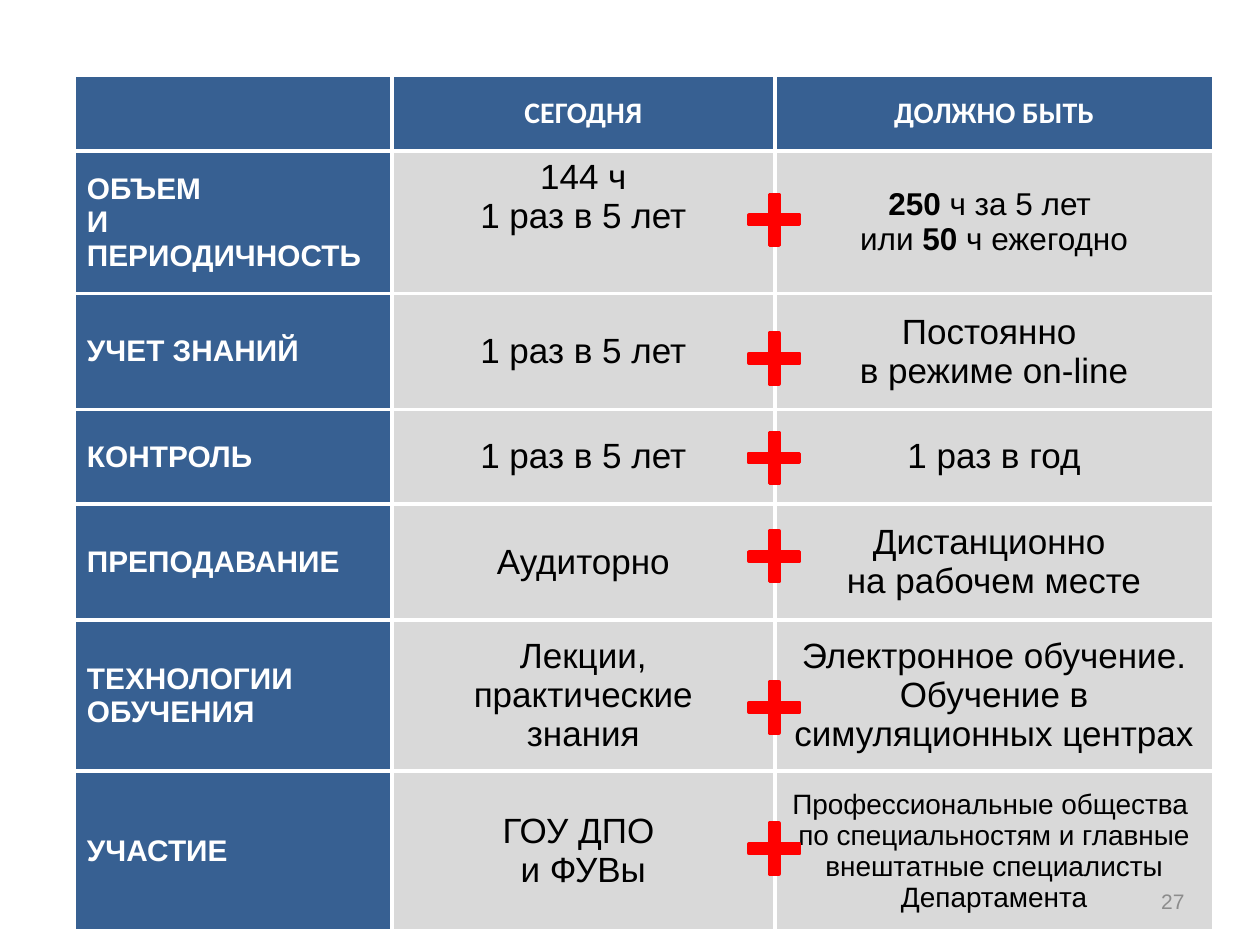
from lxml import etree
from pptx import Presentation
from pptx import util as u
from pptx.dml.color import RGBColor
from pptx.enum import shapes, text
from pptx.oxml import ns

COLORS = {
    "white": "FFFFFF",
    "black": "000000",
    "blue": "376092",
    "gray": "D9D9D9",
    "red": "FF0000",
    "number": "8C8C8C",
}
COLUMN_WIDTHS = [2.52, 3.04, 3.48]
ROW_HEIGHTS = [0.6, 1.13, 0.92, 0.75, 0.92, 1.2, 1.27]
ROWS = [
    ["", "СЕГОДНЯ", "ДОЛЖНО БЫТЬ"],
    ["ОБЪЕМ \vИ ПЕРИОДИЧНОСТЬ", "144 ч\n1 раз в 5 лет",
     "*250* ч за 5 лет \vили *50* ч ежегодно"],
    ["УЧЕТ ЗНАНИЙ", "1 раз в 5 лет", "Постоянно \vв режиме on-line"],
    ["КОНТРОЛЬ", "1 раз в 5 лет", "1 раз в год"],
    ["ПРЕПОДАВАНИЕ", "Аудиторно", "Дистанционно \vна рабочем месте"],
    ["ТЕХНОЛОГИИ ОБУЧЕНИЯ", "Лекции,\nпрактические\vзнания",
     "Электронное обучение. Обучение в симуляционных центрах"],
    ["УЧАСТИЕ", "ГОУ ДПО \vи ФУВы",
     "Профессиональные общества \vпо специальностям и главные "
     "внештатные специалисты Департамента"],
]
SPECIAL_SIZES = {(1, 2): 18, (6, 2): 16}
PLUS_TOPS = [1.47, 2.57, 3.36, 4.14, 5.34, 6.46]


def color(name):
    return RGBColor.from_string(COLORS[name])


def format_font(font, size, name, color_name, bold=False):
    font.size = u.Pt(size)
    font.name = name
    font.bold = bold
    font.color.rgb = color(color_name)


def write_paragraph(paragraph, content, alignment, bold, **font_options):
    paragraph.alignment = alignment
    for line_index, line in enumerate(content.split("\v")):
        if line_index:
            paragraph.add_line_break()
        for part_index, part in enumerate(line.split("*")):
            if part:
                run = paragraph.add_run()
                run.text = part
                format_font(run.font, bold=bold or part_index % 2 == 1, **font_options)


def add_borders(cell):
    properties = cell._tc.get_or_add_tcPr()
    for side in ("lnL", "lnR", "lnT", "lnB"):
        line = etree.SubElement(properties, ns.qn(f"a:{side}"), w=str(u.Pt(2.25)))
        fill = etree.SubElement(line, ns.qn("a:solidFill"))
        etree.SubElement(fill, ns.qn("a:srgbClr"), val=COLORS["white"])


def fill_cell(cell, content, row, column):
    heading = row == 0 or column == 0
    add_borders(cell)
    cell.fill.solid()
    cell.fill.fore_color.rgb = color("blue" if heading else "gray")
    top_aligned = (row, column) == (1, 1)
    cell.vertical_anchor = text.MSO_ANCHOR.TOP if top_aligned else text.MSO_ANCHOR.MIDDLE
    alignment = text.PP_ALIGN.CENTER if column else text.PP_ALIGN.LEFT
    frame = cell.text_frame
    for index, paragraph_text in enumerate(content.split("\n")):
        paragraph = frame.add_paragraph() if index else frame.paragraphs[0]
        write_paragraph(
            paragraph, paragraph_text, alignment, heading,
            size=17 if heading else SPECIAL_SIZES.get((row, column), 20),
            name="Calibri" if row == 0 else "Arial",
            color_name="white" if heading else "black",
        )


def add_comparison_table(slide, left, top, width, height):
    table = slide.shapes.add_table(
        len(ROWS), len(COLUMN_WIDTHS), left, top, width, height).table
    for column, column_width in zip(table.columns, COLUMN_WIDTHS):
        column.width = u.Inches(column_width)
    for row, row_height in zip(table.rows, ROW_HEIGHTS):
        row.height = u.Inches(row_height)
    for row, contents in enumerate(ROWS):
        for column, content in enumerate(contents):
            fill_cell(table.cell(row, column), content, row, column)


def add_plus(slide, left, top, size):
    shape = slide.shapes.add_shape(
        shapes.MSO_SHAPE.MATH_PLUS, left, top, size, size)
    shape.adjustments[0] = 0.133
    shape.shadow.inherit = False
    shape.fill.solid()
    shape.fill.fore_color.rgb = color("red")
    shape.line.color.rgb = color("red")
    shape.line.width = u.Pt(2)


def add_slide_number(slide, left, top, width, height):
    frame = slide.shapes.add_textbox(left, top, width, height).text_frame
    frame.word_wrap = True
    frame.vertical_anchor = text.MSO_ANCHOR.MIDDLE
    frame.text = "27"
    paragraph = frame.paragraphs[0]
    paragraph.alignment = text.PP_ALIGN.RIGHT
    format_font(paragraph.runs[0].font, 12, "Arial", "number")


def main():
    presentation = Presentation()
    presentation.slide_width = u.Inches(10)
    presentation.slide_height = u.Inches(7.5)
    slide = presentation.slides.add_slide(presentation.slide_layouts[6])
    slide.background.fill.solid()
    slide.background.fill.fore_color.rgb = color("white")
    add_comparison_table(slide, u.Inches(0.59), u.Inches(0.6),
                         u.Inches(sum(COLUMN_WIDTHS)), u.Inches(sum(ROW_HEIGHTS)))
    for top in PLUS_TOPS:
        add_plus(slide, u.Inches(5.87), u.Inches(top), u.Inches(0.55))
    add_slide_number(slide, u.Inches(7.17), u.Inches(6.95),
                     u.Inches(2.33), u.Inches(0.4))
    presentation.save("out.pptx")


if __name__ == "__main__":
    main()
